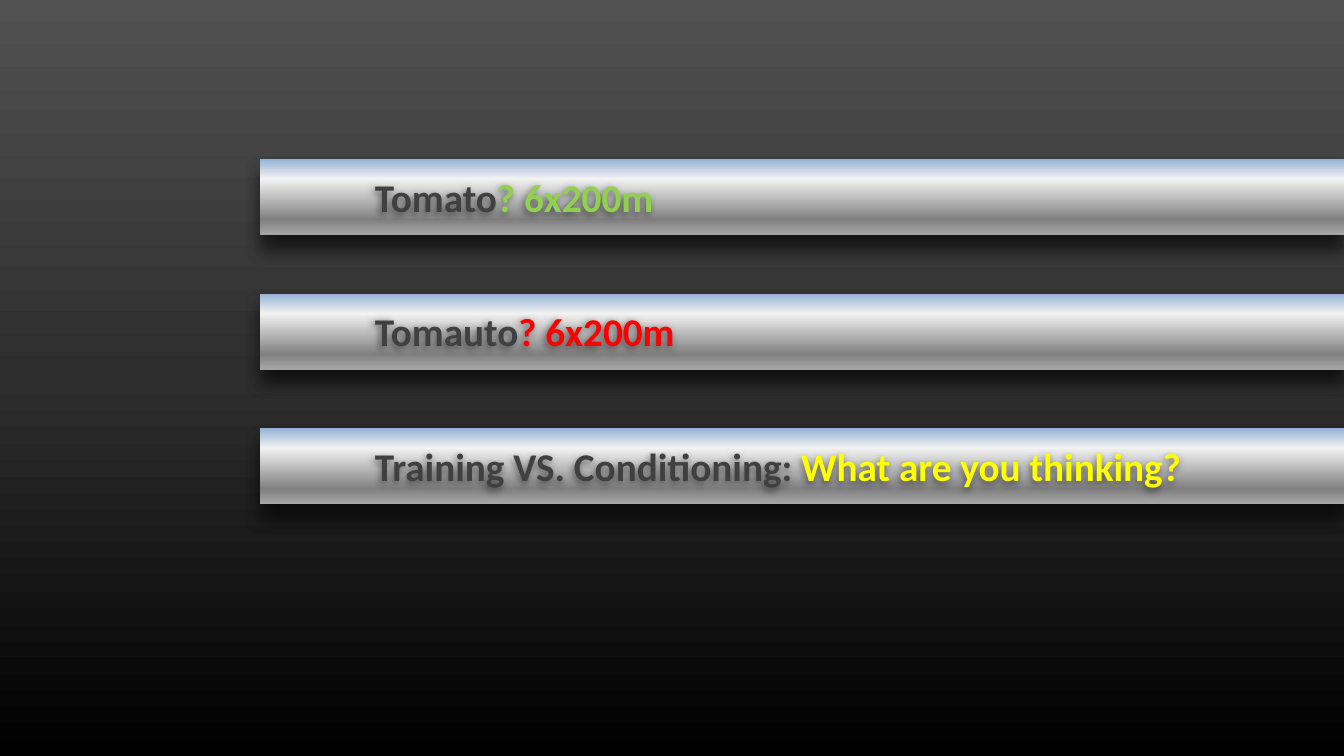
import pptx
import pptx.dml.color
import pptx.enum.shapes
import pptx.oxml.ns
import pptx.util
from lxml import etree

# Content: lead words, highlighted words, highlight colour, box width, box inset from bar top
BARS = [
    ("Tomato", "? 6x200m", "green", 8, 0.09),
    ("Tomauto", "? 6x200m", "red", 8.13, 0.08),
    ("Training VS. Conditioning: ", "What are you thinking?", "yellow", 8.49, 0.09),
]

THEME = {
    "font": "Calibri",
    "size": 28,
    "lead": "404040",
    "green": "92D050",
    "red": "FF0000",
    "yellow": "FFFF00",
    "shadow": "000000",
    "background": [(0, "515151"), (50, "2E2E2E"), (100, "000000")],
    "metal": [(0, "95B3D7"), (26, "F2F2F2"), (80, "808080"), (100, "A6A6A6")],
}

# Layout in inches
SLIDE_WIDTH, SLIDE_HEIGHT = 13.33, 7.5
BAR_LEFT, BAR_TOP, BAR_HEIGHT = 2.58, 1.58, 0.75
BAR_PITCH = SLIDE_HEIGHT * 0.178
TEXT_LEFT, TEXT_HEIGHT = 3.62, 0.57

qn = pptx.oxml.ns.qn
inches = pptx.util.Inches


def apply_gradient(fill, element, stops, angle):
    fill.gradient()
    gradient = element.find(".//" + qn("a:gradFill"))
    stop_list = gradient.find(qn("a:gsLst"))
    for stop in list(stop_list):
        stop_list.remove(stop)
    for position, color in stops:
        stop = etree.SubElement(stop_list, qn("a:gs"), pos=str(position * 1000))
        etree.SubElement(stop, qn("a:srgbClr"), val=color)
    gradient.find(qn("a:lin")).set("ang", str(angle * 60000))


def apply_shadow(shape, blur, distance, angle, opacity):
    shape.shadow.inherit = False
    effects = shape.element.spPr.find(qn("a:effectLst"))
    shadow = etree.SubElement(
        effects, qn("a:outerShdw"), blurRad=str(pptx.util.Pt(blur)),
        dist=str(pptx.util.Pt(distance)), dir=str(angle * 60000), rotWithShape="0")
    color = etree.SubElement(shadow, qn("a:srgbClr"), val=THEME["shadow"])
    etree.SubElement(color, qn("a:alpha"), val=str(opacity * 1000))


def add_bar(slide, top, angle):
    bar = slide.shapes.add_shape(
        pptx.enum.shapes.MSO_SHAPE.RECTANGLE, inches(BAR_LEFT), inches(top),
        inches(SLIDE_WIDTH - BAR_LEFT), inches(BAR_HEIGHT))
    apply_gradient(bar.fill, bar.element, THEME["metal"], angle)
    bar.line.fill.background()
    apply_shadow(bar, blur=12, distance=9, angle=90, opacity=40)


def add_label(slide, top, width, runs):
    label = slide.shapes.add_textbox(
        inches(TEXT_LEFT), inches(top), inches(width), inches(TEXT_HEIGHT))
    label.text_frame.word_wrap = False
    paragraph = label.text_frame.paragraphs[0]
    paragraph.font.name = THEME["font"]
    paragraph.font.size = pptx.util.Pt(THEME["size"])
    paragraph.font.bold = True
    for text, color in runs:
        run = paragraph.add_run()
        run.text = text
        run.font.color.rgb = pptx.dml.color.RGBColor.from_string(THEME[color])
    apply_shadow(label, blur=5, distance=2, angle=135, opacity=50)


def main():
    presentation = pptx.Presentation()
    presentation.slide_width = inches(SLIDE_WIDTH)
    presentation.slide_height = inches(SLIDE_HEIGHT)
    slide = presentation.slides.add_slide(presentation.slide_layouts[6])
    apply_gradient(slide.background.fill, slide.element, THEME["background"], 90)

    # Each bar is two stacked sheens, which deepens its shadow, under a label
    for row, (lead, highlight, color, width, inset) in enumerate(BARS):
        top = BAR_TOP + row * BAR_PITCH
        for angle in (270, 90):
            add_bar(slide, top, angle)
        add_label(slide, top + inset, width, [(lead, "lead"), (highlight, color)])

    presentation.save("out.pptx")


if __name__ == "__main__":
    main()
